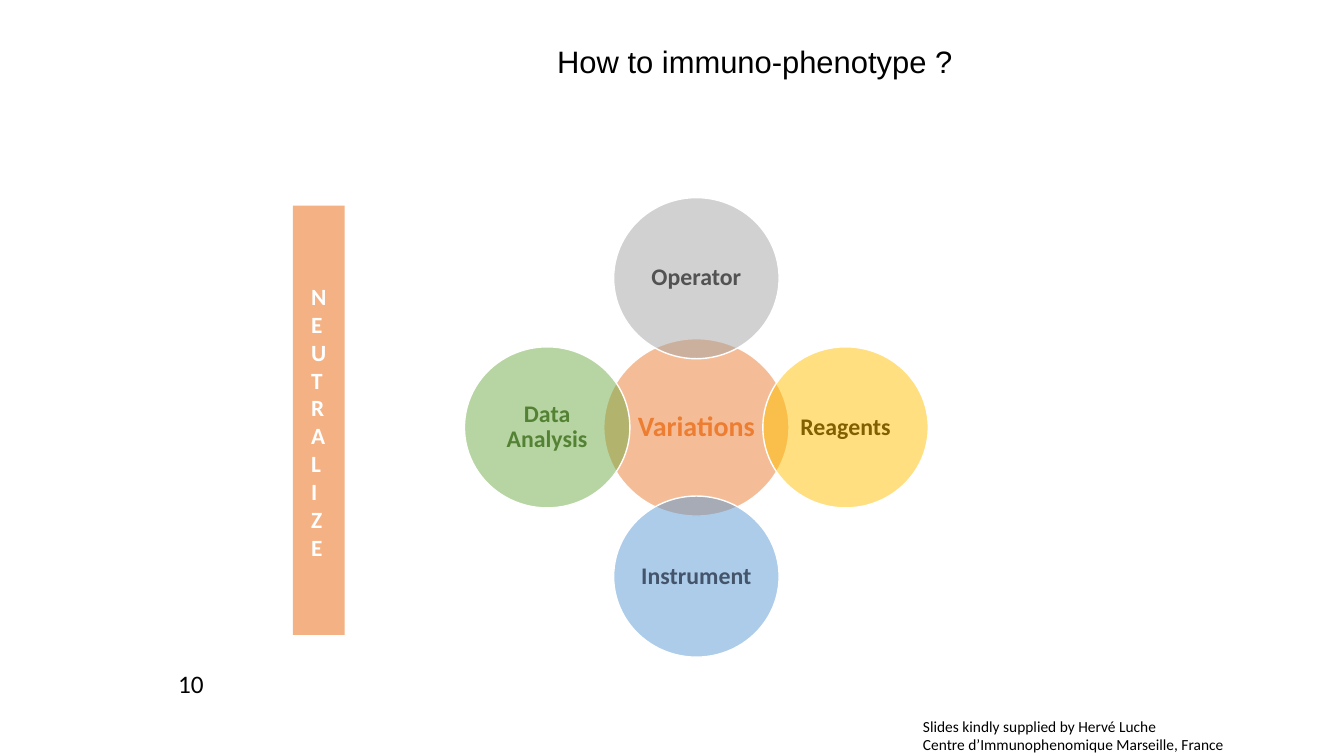
from dataclasses import dataclass

from lxml import etree
from pptx import Presentation
from pptx import util as u
from pptx.dml.color import RGBColor
from pptx.enum import shapes, text
from pptx.oxml.ns import qn

BLACK = RGBColor(0x00, 0x00, 0x00)
WHITE = RGBColor(0xFF, 0xFF, 0xFF)
ORANGE = RGBColor(0xED, 0x7D, 0x31)
LIGHT_ORANGE = RGBColor(0xF4, 0xB1, 0x83)
GREY = RGBColor(0xA5, 0xA5, 0xA5)
DARK_GREY = RGBColor(0x52, 0x52, 0x52)
YELLOW = RGBColor(0xFF, 0xC0, 0x00)
DARK_YELLOW = RGBColor(0x80, 0x60, 0x00)
BLUE = RGBColor(0x5B, 0x9B, 0xD5)
SLATE = RGBColor(0x44, 0x54, 0x6A)
GREEN = RGBColor(0x70, 0xAD, 0x47)
DARK_GREEN = RGBColor(0x54, 0x82, 0x35)

# Diagram geometry in centimetres
CENTRE_X, CENTRE_Y = 17.55, 10.77
ORBIT = 3.76
HUB_SIZE = (4.67, 4.47)
SOURCE_SIZE = (4.17, 4.06)


@dataclass(frozen=True)
class Circle:
    label: str
    fill: RGBColor
    font_color: RGBColor
    column: int = 0  # steps of ORBIT from the centre
    row: int = 0
    size: tuple[float, float] = SOURCE_SIZE
    points: float = 17


CIRCLES = [
    Circle("Variations", ORANGE, ORANGE, size=HUB_SIZE, points=20),
    Circle("Operator", GREY, DARK_GREY, row=-1),
    Circle("Reagents", YELLOW, DARK_YELLOW, column=1),
    Circle("Instrument", BLUE, SLATE, row=1),
    Circle("Data Analysis", GREEN, DARK_GREEN, column=-1),
]


def write(shape, content: str, *, size: float, color: RGBColor = BLACK,
          font: str = "Calibri", bold: bool = False, wrap: bool = True,
          align=text.PP_ALIGN.LEFT, anchor=text.MSO_ANCHOR.TOP,
          spacing: float = 1.0, insets=(0.25, 0.13, 0.25, 0.13)) -> None:
    """Fill a shape with text; insets are left, top, right, bottom in cm."""
    frame = shape.text_frame
    frame.text = content
    frame.word_wrap = wrap
    frame.auto_size = text.MSO_AUTO_SIZE.NONE
    frame.vertical_anchor = anchor
    (frame.margin_left, frame.margin_top,
     frame.margin_right, frame.margin_bottom) = map(u.Cm, insets)
    for paragraph in frame.paragraphs:
        paragraph.alignment = align
        paragraph.line_spacing = spacing
        for run in paragraph.runs:
            run.font.name = font
            run.font.size = u.Pt(size)
            run.font.bold = bold
            run.font.color.rgb = color


def add_filled(slide, preset, left: float, top: float, width: float,
               height: float, fill: RGBColor):
    shape = slide.shapes.add_shape(
        preset, u.Cm(left), u.Cm(top), u.Cm(width), u.Cm(height))
    shape.shadow.inherit = False
    shape.fill.solid()
    shape.fill.fore_color.rgb = fill
    return shape


def add_circle(slide, circle: Circle) -> None:
    width, height = circle.size
    shape = add_filled(
        slide, shapes.MSO_SHAPE.OVAL,
        CENTRE_X + circle.column * ORBIT - width / 2,
        CENTRE_Y + circle.row * ORBIT - height / 2,
        width, height, circle.fill)
    color = shape.fill._xPr.find(qn("a:solidFill"))[0]
    etree.SubElement(color, qn("a:alpha"), val="50000")
    shape.line.color.rgb = WHITE
    shape.line.width = u.Pt(1)
    write(shape, circle.label, size=circle.points, color=circle.font_color,
          bold=True, align=text.PP_ALIGN.CENTER,
          anchor=text.MSO_ANCHOR.MIDDLE, spacing=0.9, insets=(0.06,) * 4)


def add_note(slide, content: str, left: float, top: float, width: float,
             height: float, size: float, wrap: bool = True) -> None:
    box = slide.shapes.add_textbox(
        u.Cm(left), u.Cm(top), u.Cm(width), u.Cm(height))
    write(box, content, size=size, wrap=wrap)


def main() -> None:
    deck = Presentation()
    deck.slide_width, deck.slide_height = u.Cm(33.87), u.Cm(19.05)
    slide = deck.slides.add_slide(deck.slide_layouts[5])

    # Title
    title = slide.shapes.title
    title.left, title.top = u.Cm(4.67), u.Cm(0.33)
    title.width, title.height = u.Cm(28.8), u.Cm(2.57)
    write(title, "How to immuno-phenotype ?", size=22.1, font="Arial",
          align=text.PP_ALIGN.CENTER, anchor=text.MSO_ANCHOR.MIDDLE,
          spacing=0.9, insets=(0.15, 0.1, 0.25, 0.13))

    # Credit and page number
    add_note(slide, "Slides kindly supplied by Hervé Luche\n"
             "Centre d’Immunophenomique Marseille, France",
             23.01, 17.93, 8.15, 1.19, size=11, wrap=False)
    add_note(slide, "10", 4.24, 16.71, 1.19, 0.94, size=18)

    # Sources of variation around the hub
    for circle in CIRCLES:
        add_circle(slide, circle)

    # Bar just wide enough for one letter a line
    neutralize = add_filled(slide, shapes.MSO_SHAPE.RECTANGLE,
                            7.38, 5.18, 1.31, 10.82, LIGHT_ORANGE)
    neutralize.line.fill.background()
    write(neutralize, "NEUTRAL\nI\nZE", size=16.6, color=WHITE, bold=True,
          insets=(0.46, 1.93, 0.45, 0.13))

    deck.save("out.pptx")


if __name__ == "__main__":
    main()
